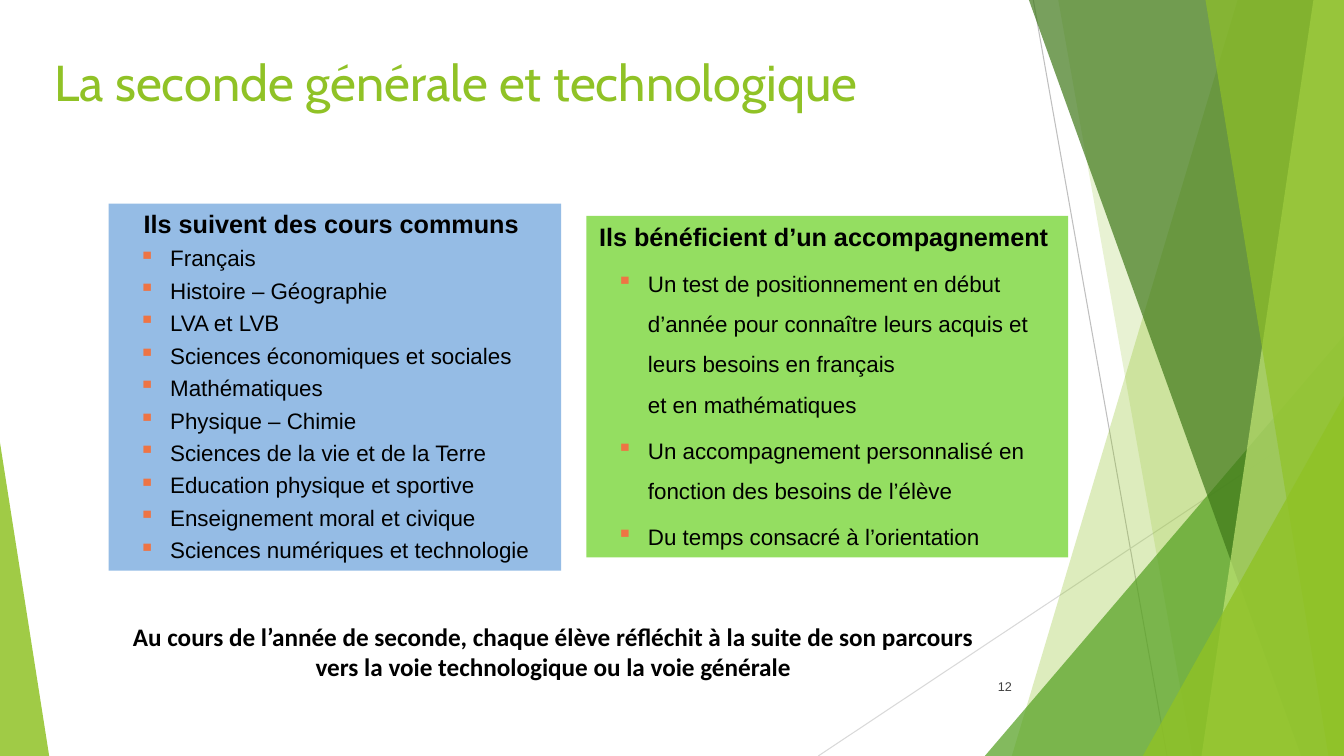
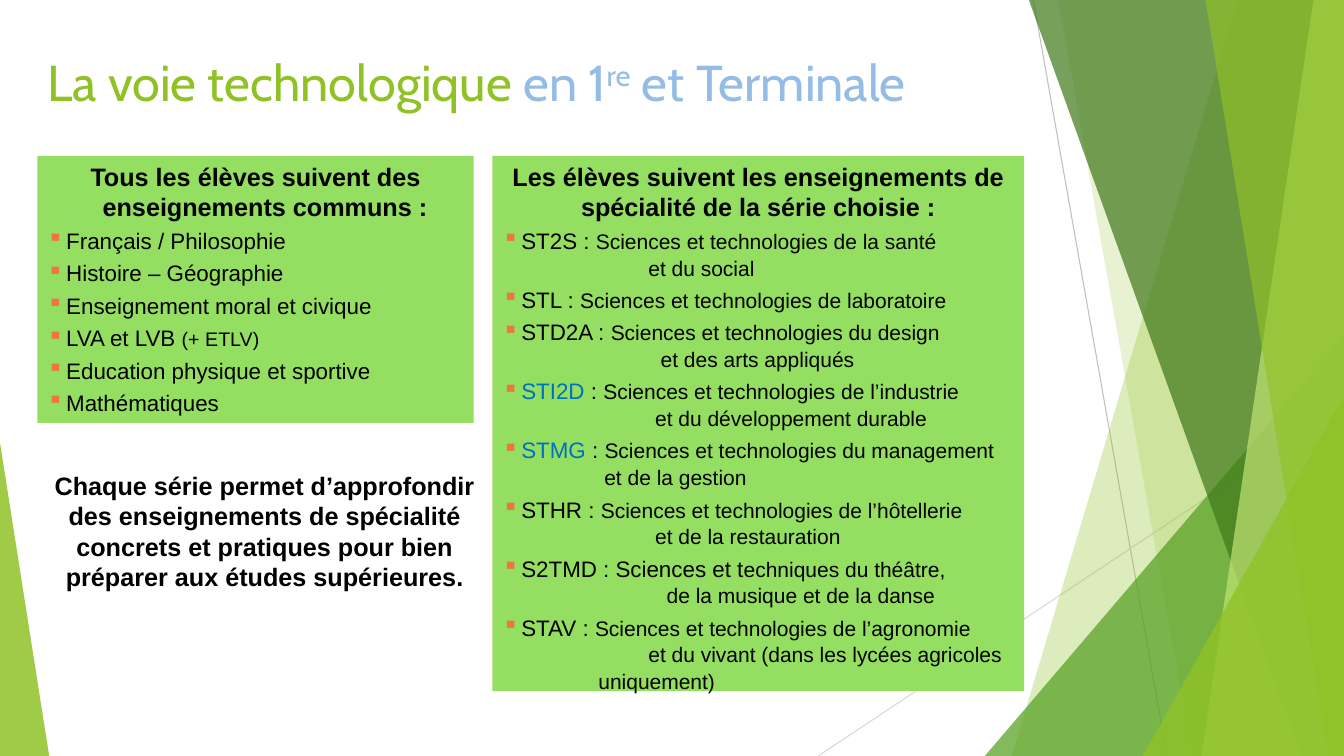
from dataclasses import dataclass
from typing import Any, Optional

import lxml.etree
import pptx
import pptx.dml.color
import pptx.enum.shapes
import pptx.enum.text
import pptx.oxml.ns
import pptx.util

Cm = pptx.util.Cm
Pt = pptx.util.Pt
RGBColor = pptx.dml.color.RGBColor
Align = pptx.enum.text.PP_ALIGN
Anchor = pptx.enum.text.MSO_ANCHOR
qn = pptx.oxml.ns.qn

GREEN = RGBColor(0x90, 0xC2, 0x26)
MID_GREEN = RGBColor(0x54, 0xA0, 0x21)
DARK_GREEN = RGBColor(0x3F, 0x78, 0x19)
PALE_GREEN = RGBColor(0xC0, 0xE4, 0x74)
PANEL_GREEN = RGBColor(0x94, 0xDE, 0x61)
SKY = RGBColor(0x95, 0xBC, 0xE5)
LINK_BLUE = RGBColor(0x00, 0x70, 0xC0)
ORANGE = RGBColor(0xEE, 0x74, 0x44)
BLACK = RGBColor(0, 0, 0)
NUMBER_GREY = RGBColor(0x40, 0x40, 0x40)
RAY_GREY = RGBColor(0xBF, 0xBF, 0xBF)
PALE_GREY = RGBColor(0xD9, 0xD9, 0xD9)

WIDTH, HEIGHT = 33.87, 19.05
WIDE_INDENT, NARROW_INDENT = (1.3, 0.79), (0.48, 0.48)


@dataclass(frozen=True)
class Area:
    left: float
    top: float
    width: float
    height: float

    def lengths(self) -> tuple:
        return Cm(self.left), Cm(self.top), Cm(self.width), Cm(self.height)


@dataclass(frozen=True)
class Band:
    top_x: float
    bottom_x: float
    color: RGBColor
    opacity: int


@dataclass(frozen=True)
class Wedge:
    area: Area
    apex: float
    color: RGBColor
    opacity: int


@dataclass(frozen=True)
class Ray:
    start: tuple[float, float]
    end: tuple[float, float]
    color: RGBColor


@dataclass(frozen=True)
class Span:
    text: str
    size: float = 16
    color: RGBColor = BLACK
    bold: bool = False
    font: str = "Arial"
    raised: bool = False


@dataclass(frozen=True)
class Course:
    code: str
    name: str
    tail: tuple[tuple[float, str], ...] = ()
    color: RGBColor = BLACK
    joint: str = " : "


RAYS = [
    Ray((26.04, 0), (29.41, HEIGHT), RAY_GREY),
    Ray((WIDTH, 10.24), (20.62, HEIGHT), PALE_GREY),
]
FACETS = [
    Band(31.19, 25.5, GREEN, 30),
    Band(26.67, 30.05, GREEN, 20),
    Wedge(Area(24.82, 8.46, 9.05, 10.59), 1, MID_GREEN, 72),
    Band(25.93, 32.79, DARK_GREEN, 70),
    Band(33.1, 30.28, PALE_GREEN, 70),
    Band(30.38, 33.48, GREEN, 65),
    Wedge(Area(28.8, 9.98, 5.07, 9.07), 1, GREEN, 80),
    Wedge(Area(0, 11.15, 1.24, 7.9), 0, GREEN, 85),
]

COMMON_COURSES = [
    "Français", "Histoire – Géographie", "LVA et LVB",
    "Sciences économiques et sociales", "Mathématiques", "Physique – Chimie",
    "Sciences de la vie et de la Terre", "Education physique et sportive",
    "Enseignement moral et civique", "Sciences numériques et technologie",
]
SUPPORT = [
    "Un test de positionnement en début d’année pour connaître leurs acquis "
    "et leurs besoins en français\net en mathématiques",
    "Un accompagnement personnalisé en fonction des besoins de l’élève",
    "Du temps consacré à l’orientation",
]
TECHNOLOGY_COURSES = [
    [Span("Français / Philosophie")],
    [Span("Histoire – Géographie")],
    [Span("Enseignement moral et civique")],
    [Span("LVA et LVB "), Span("(+ ETLV)", size=14)],
    [Span("Education physique et sportive")],
    [Span("Mathématiques")],
]
SERIES = [
    Course("ST2S", "Sciences et technologies de la santé", ((3.68, "et du social"),)),
    Course("STL", "Sciences et technologies de laboratoire"),
    Course("STD2A", "Sciences et technologies du design",
           ((3.99, "et des arts appliqués"),)),
    Course("STI2D", "Sciences et technologies de l’industrie",
           ((3.85, "et du développement durable"),), LINK_BLUE),
    Course("STMG", "Sciences et technologies du management",
           ((2.57, "et de la gestion"),), LINK_BLUE),
    Course("STHR", "Sciences et technologies de l’hôtellerie",
           ((3.85, "et de la restauration"),)),
    Course("S2TMD", "echniques du théâtre,",
           ((4.14, "de la musique et de la danse"),), joint=" : Sciences et t"),
    Course("STAV", "Sciences et technologies de l’agronomie",
           ((3.68, "et du vivant (dans les lycées agricoles"), (2.42, "uniquement)"))),
]


def set_opacity(shape: Any, percent: int) -> None:
    color = shape.element.spPr.find(".//" + qn("a:srgbClr"))
    lxml.etree.SubElement(color, qn("a:alpha")).set("val", str(percent * 1000))


def paint(shape: Any, color: RGBColor) -> None:
    shape.shadow.inherit = False
    shape.fill.solid()
    shape.fill.fore_color.rgb = color
    shape.line.fill.background()


def draw_ray(shapes: Any, ray: Ray) -> None:
    ends = [Cm(value) for value in (*ray.start, *ray.end)]
    line = shapes.add_connector(pptx.enum.shapes.MSO_CONNECTOR.STRAIGHT, *ends)
    line.line.color.rgb = ray.color
    line.line.width = Pt(0.75)
    lxml.etree.SubElement(line.element.spPr, qn("a:effectLst"))


def draw_facet(shapes: Any, facet: Band | Wedge) -> None:
    if isinstance(facet, Wedge):
        kind = pptx.enum.shapes.MSO_SHAPE.ISOSCELES_TRIANGLE
        shape = shapes.add_shape(kind, *facet.area.lengths())
        shape.adjustments[0] = facet.apex
    else:
        outline = shapes.build_freeform(Cm(facet.top_x), 0)
        corners = [(WIDTH, 0), (WIDTH, HEIGHT), (facet.bottom_x, HEIGHT)]
        outline.add_line_segments([(Cm(x), Cm(y)) for x, y in corners])
        shape = outline.convert_to_shape()
    paint(shape, facet.color)
    set_opacity(shape, facet.opacity)


def decorate_layout(layout: Any, page: Any) -> None:
    group = page.shapes.add_group_shape()
    for ray in RAYS:
        draw_ray(group.shapes, ray)
    for facet in FACETS:
        draw_facet(group.shapes, facet)
    tree = layout.shapes.element
    tree.append(group.element)
    for number, item in enumerate(tree.iter(qn("p:cNvPr")), 1):
        item.set("id", str(number))


def write(frame: Any, spans: list[Span], *, align: Align = Align.LEFT,
          indent: tuple[float, float] = (0, 0), before: float = 0,
          spacing: Optional[float] = None, bullet: bool = False) -> None:
    para = frame.paragraphs[0]
    if para.runs:
        para = frame.add_paragraph()
    para.alignment = align
    para.space_before = Pt(before)
    if spacing:
        para.line_spacing = spacing
    left, hanging = indent
    settings = para._p.get_or_add_pPr()
    settings.set("marL", str(Cm(left)))
    settings.set("indent", str(-Cm(hanging)))
    if bullet:
        tint = lxml.etree.SubElement(settings, qn("a:buClr"))
        lxml.etree.SubElement(tint, qn("a:srgbClr")).set("val", str(ORANGE))
        lxml.etree.SubElement(settings, qn("a:buChar")).set("char", "▪")
    for item in spans:
        for index, text in enumerate(item.text.split("\n")):
            if index:
                para.add_line_break()
            span = para.add_run()
            span.text = text
            span.font.name = item.font
            span.font.size = Pt(item.size)
            span.font.bold = item.bold
            span.font.color.rgb = item.color
            if item.raised:
                span._r.get_or_add_rPr().set("baseline", "30000")


def write_heading(frame: Any, text: str, *, font: str = "Arial",
                  indent: tuple[float, float] = (0, 0)) -> None:
    write(frame, [Span(text, size=18, bold=True, font=font)],
          align=Align.CENTER, indent=indent)


def write_bullet(frame: Any, spans: list[Span], *, indent: tuple[float, float],
                 spacing: Optional[float] = None) -> None:
    write(frame, spans, indent=indent, before=4, spacing=spacing, bullet=True)


def prepare_frame(box: Any, anchor: Anchor = Anchor.TOP) -> Any:
    frame = box.text_frame
    frame.word_wrap = True
    frame.auto_size = pptx.enum.text.MSO_AUTO_SIZE.NONE
    frame.vertical_anchor = anchor
    return frame


def add_panel(page: Any, area: Area, color: RGBColor) -> Any:
    box = page.shapes.add_shape(pptx.enum.shapes.MSO_SHAPE.RECTANGLE, *area.lengths())
    paint(box, color)
    return prepare_frame(box)


def add_text(page: Any, area: Area, anchor: Anchor = Anchor.TOP) -> Any:
    return prepare_frame(page.shapes.add_textbox(*area.lengths()), anchor)


def set_title(page: Any, area: Area, *parts: Span) -> None:
    title = page.shapes.title
    title.left, title.top, title.width, title.height = area.lengths()
    write(prepare_frame(title), list(parts))


def title_span(text: str, color: RGBColor = GREEN, raised: bool = False) -> Span:
    return Span(text, size=36, color=color, font="Cabin", raised=raised)


def build_general_page(page: Any) -> None:
    set_title(page, Area(1.12, 1.17, 24.2, 2.54),
              title_span("La seconde générale et technologique"))
    number = add_text(page, Area(23.85, 16.79, 1.9, 1.02), Anchor.MIDDLE)
    write(number, [Span("12", size=9, color=NUMBER_GREY)], align=Align.RIGHT)

    support = add_panel(page, Area(14.78, 5.44, 12.14, 8.61), PANEL_GREEN)
    write_heading(support, "Ils bénéficient d’un accompagnement ")
    for text in SUPPORT:
        write_bullet(support, [Span(text)], indent=WIDE_INDENT, spacing=1.5)

    note = add_text(page, Area(2.54, 15.52, 22.81, 1.8))
    write_heading(note, "Au cours de l’année de seconde, chaque élève réfléchit à la suite "
                  "de son parcours vers la voie technologique ou la voie générale",
                  font="Calibri")

    courses = add_panel(page, Area(2.74, 5.13, 11.4, 9.25), SKY)
    write_heading(courses, "Ils suivent des cours communs ")
    for text in COMMON_COURSES:
        write_bullet(courses, [Span(text)], indent=WIDE_INDENT)


def build_technology_page(page: Any) -> None:
    set_title(page, Area(0.94, 1.17, 24.41, 3.15),
              title_span("La voie technologique "), title_span("en 1", SKY),
              title_span("re", SKY, raised=True), title_span(" et Terminale", SKY))

    courses = add_panel(page, Area(0.94, 3.93, 11, 6.73), PANEL_GREEN)
    write_heading(courses, "Tous les élèves suivent des enseignements communs :",
                  indent=NARROW_INDENT)
    for spans in TECHNOLOGY_COURSES:
        write_bullet(courses, spans, indent=NARROW_INDENT)

    note = add_text(page, Area(0.94, 11.73, 11.46, 3.33))
    write_heading(note, "Chaque série permet d’approfondir des enseignements de spécialité "
                  "concrets et pratiques pour bien préparer aux études supérieures.")

    series = add_panel(page, Area(12.41, 3.93, 13.4, 13.49), PANEL_GREEN)
    write_heading(series, "Les élèves suivent les enseignements de spécialité "
                  "de la série choisie :")
    for course in SERIES:
        write_bullet(series, [Span(course.code, color=course.color), Span(course.joint),
                              Span(course.name, size=15)], indent=NARROW_INDENT)
        for left, text in course.tail:
            write(series, [Span(text, size=15)], indent=(left, 0), before=1)


def main() -> None:
    deck = pptx.Presentation()
    deck.slide_width, deck.slide_height = Cm(WIDTH), Cm(HEIGHT)
    layout = deck.slide_layouts[5]
    pages = [deck.slides.add_slide(layout) for _ in range(2)]
    decorate_layout(layout, pages[0])
    build_general_page(pages[0])
    build_technology_page(pages[1])
    deck.save("out.pptx")


if __name__ == "__main__":
    main()
